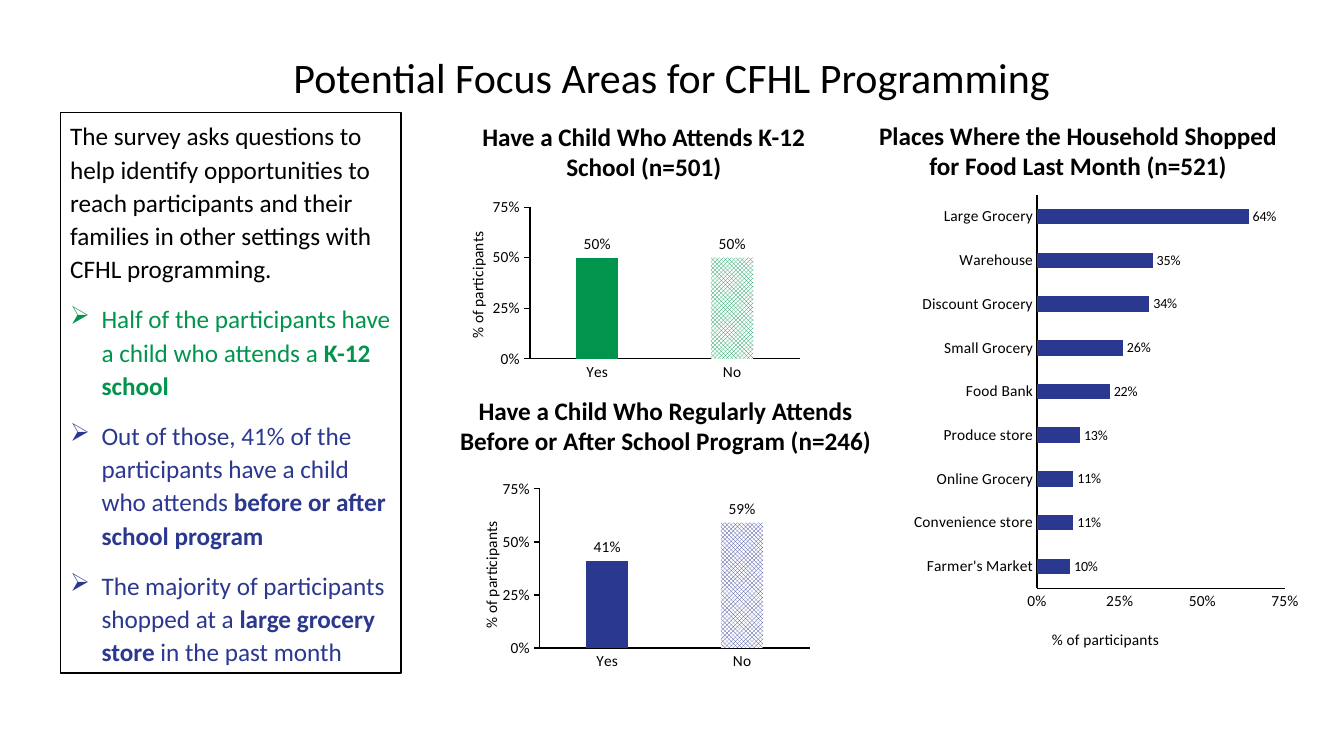
from dataclasses import dataclass

from lxml.etree import SubElement
from pptx import Presentation
from pptx.chart.data import CategoryChartData
from pptx.dml.color import RGBColor
from pptx.enum.chart import XL_CHART_TYPE, XL_LABEL_POSITION, XL_TICK_MARK
from pptx.enum.dml import MSO_PATTERN
from pptx.enum.shapes import MSO_SHAPE
from pptx.enum.text import MSO_ANCHOR, PP_ALIGN
from pptx.oxml.ns import qn
from pptx.oxml.xmlchemy import OxmlElement
from pptx.util import Cm, Pt


@dataclass(frozen=True)
class Theme:
    font: str = "Calibri"
    black: RGBColor = RGBColor(0x00, 0x00, 0x00)
    white: RGBColor = RGBColor(0xFF, 0xFF, 0xFF)
    green: RGBColor = RGBColor(0x00, 0x94, 0x4D)
    blue: RGBColor = RGBColor(0x2B, 0x38, 0x8F)
    title_size: Pt = Pt(30)
    body_size: Pt = Pt(18)
    axis_size: Pt = Pt(11)
    small_size: Pt = Pt(10)
    line_width: Pt = Pt(1)


class SlideBuilder:
    def __init__(self, slide, theme):
        self.slide = slide
        self.theme = theme

    def style(self, font, size, color=None, bold=False):
        font.name = self.theme.font
        font.size = size
        font.bold = bold
        font.color.rgb = color or self.theme.black

    def title(self, text, box):
        shape = self.slide.shapes.add_shape(MSO_SHAPE.ROUNDED_RECTANGLE, *map(Cm, box))
        shape.shadow.inherit = False
        shape.fill.background()
        shape.line.fill.background()
        frame = shape.text_frame
        frame.text = text
        frame.vertical_anchor = MSO_ANCHOR.MIDDLE
        frame.paragraphs[0].alignment = PP_ALIGN.CENTER
        self.style(frame.paragraphs[0].runs[0].font, self.theme.title_size)

    def heading(self, text, box):
        frame = self.slide.shapes.add_textbox(*map(Cm, box)).text_frame
        frame.word_wrap = True
        frame.text = text
        paragraph = frame.paragraphs[0]
        paragraph.alignment = PP_ALIGN.CENTER
        self.style(paragraph.runs[0].font, self.theme.body_size, bold=True)

    def findings(self, intro, bullets, box):
        shape = self.slide.shapes.add_shape(MSO_SHAPE.RECTANGLE, *map(Cm, box))
        shape.shadow.inherit = False
        shape.fill.solid()
        shape.fill.fore_color.rgb = self.theme.white
        shape.line.color.rgb = self.theme.black
        shape.line.width = self.theme.line_width
        frame = shape.text_frame
        frame.word_wrap = True
        frame.vertical_anchor = MSO_ANCHOR.TOP
        paragraph = frame.paragraphs[0]
        paragraph.text = intro
        paragraph.alignment = PP_ALIGN.LEFT
        paragraph.line_spacing = 1.1
        self.style(paragraph.runs[0].font, self.theme.body_size)
        for color, parts in bullets:
            self.bullet(frame.add_paragraph(), color, parts)

    def bullet(self, paragraph, color, parts):
        properties = paragraph._p.get_or_add_pPr()
        properties.set("marL", str(Cm(0.79)))
        properties.set("indent", str(-Cm(0.79)))
        SubElement(properties, qn("a:buChar")).set("char", "➢")
        paragraph.alignment = PP_ALIGN.LEFT
        paragraph.line_spacing = 1.1
        paragraph.space_before = Pt(12)
        for text, bold in parts:
            run = paragraph.add_run()
            run.text = text
            self.style(run.font, self.theme.body_size, color, bold)

    def place(self, parent, index, **values):
        for layout in parent.findall(qn("c:layout")):
            parent.remove(layout)
        layout = OxmlElement("c:layout")
        parent.insert(index, layout)
        manual = SubElement(layout, qn("c:manualLayout"))
        for name, value in values.items():
            SubElement(manual, qn(f"c:{name}")).set("val", str(value))

    def axis(self, axis, tick_mark):
        axis.has_major_gridlines = False
        axis.major_tick_mark = tick_mark
        axis.minor_tick_mark = XL_TICK_MARK.NONE
        axis.format.line.color.rgb = self.theme.black
        axis.format.line.width = self.theme.line_width
        self.style(axis.tick_labels.font, self.theme.axis_size)

    def value_axis(self, axis, tick_mark, title_place, rotation):
        self.axis(axis, tick_mark)
        axis.minimum_scale, axis.maximum_scale, axis.major_unit = 0, 0.75, 0.25
        axis.tick_labels.number_format = "0%"
        axis.tick_labels.number_format_is_linked = False
        frame = axis.axis_title.text_frame
        frame.text = "% of participants"
        self.style(frame.paragraphs[0].runs[0].font, self.theme.axis_size)
        frame._txBody.find(qn("a:bodyPr")).set("rot", str(rotation))
        left, top = title_place
        self.place(axis.axis_title._element, 1, xMode="edge", yMode="edge", x=left, y=top)

    def chart(self, kind, values, color, box, plot_place, title_place):
        data = CategoryChartData(number_format="0%")
        data.categories = list(values)
        data.add_series("Series 1", list(values.values()))
        chart = self.slide.shapes.add_chart(kind, *map(Cm, box), data).chart
        upright = kind == XL_CHART_TYPE.COLUMN_CLUSTERED
        chart.has_legend = False
        chart.has_title = False
        self.style(chart.font, self.theme.small_size)
        self.axis(chart.category_axis, XL_TICK_MARK.NONE)
        tick_mark = XL_TICK_MARK.OUTSIDE if upright else XL_TICK_MARK.NONE
        self.value_axis(chart.value_axis, tick_mark, title_place, -5400000 if upright else 0)

        plot = chart.plots[0]
        plot.vary_by_categories = False
        plot.gap_width = 219 if upright else 182
        series = plot.series[0]
        series.format.fill.solid()
        series.format.fill.fore_color.rgb = color
        if upright:
            plot.overlap = -27
            fill = series.points[1].format.fill
            fill.patterned()
            fill.pattern = MSO_PATTERN.TRELLIS
            fill.fore_color.rgb = color
            fill.back_color.rgb = self.theme.white

        labels = series.data_labels
        labels.show_value = True
        labels.position = XL_LABEL_POSITION.OUTSIDE_END
        labels.number_format = "0%"
        labels.number_format_is_linked = False
        self.style(labels.font, self.theme.axis_size if upright else self.theme.small_size)

        left, top, width, height = plot_place
        plot_area = chart._chartSpace.chart.plotArea
        self.place(plot_area, 0, layoutTarget="inner", xMode="edge", yMode="edge",
                   x=left, y=top, w=width, h=height)


def main():
    presentation = Presentation()
    presentation.slide_width = Cm(33.87)
    presentation.slide_height = Cm(19.05)
    theme = Theme()
    builder = SlideBuilder(presentation.slides.add_slide(presentation.slide_layouts[6]), theme)

    builder.heading("Have a Child Who Attends K-12 School (n=501)", (11.02, 2.92, 10.41, 1.8))
    builder.heading("Have a Child Who Regularly Attends Before or After School Program (n=246)",
                    (11.02, 9.83, 11.51, 1.8))
    builder.heading("Places Where the Household Shopped for Food Last Month (n=521)",
                    (21.67, 2.9, 11, 1.8))
    builder.findings(
        "The survey asks questions to help identify opportunities to reach participants "
        "and their families in other settings with CFHL programming.",
        [
            (theme.green, [("Half of the participants have a child who attends a ", False),
                           ("K-12 school", True)]),
            (theme.blue, [("Out of those, 41% of the participants have a child who attends ", False),
                          ("before or after school program", True)]),
            (theme.blue, [("The majority of participants shopped at a ", False),
                          ("large grocery store ", True), ("in the past month", False)]),
        ],
        (1.52, 2.84, 8.59, 14.12))
    builder.title("Potential Focus Areas for CFHL Programming", (0, 0.97, 33.87, 1.93))

    column, bar = XL_CHART_TYPE.COLUMN_CLUSTERED, XL_CHART_TYPE.BAR_CLUSTERED
    builder.chart(column, {"Yes": 0.5, "No": 0.5}, theme.green,
                  (11.33, 4.47, 9.19, 5.38), (0.22, 0.14, 0.74, 0.71), (0.04, 0.24))
    builder.chart(column, {"Yes": 0.41, "No": 0.59}, theme.blue,
                  (11.58, 11.4, 9.19, 5.74), (0.22, 0.16, 0.74, 0.7), (0.05, 0.29))
    shops = {"Farmer's Market": 0.1, "Convenience store": 0.11, "Online Grocery": 0.11,
             "Produce store": 0.13, "Food Bank": 0.22, "Small Grocery": 0.26,
             "Discount Grocery": 0.34, "Warehouse": 0.35, "Large Grocery": 0.64}
    builder.chart(bar, shops, theme.blue,
                  (22.81, 4.67, 10.08, 12.09), (0.33, 0.02, 0.62, 0.82), (0.36, 0.92))
    presentation.save("out.pptx")


if __name__ == "__main__":
    main()
